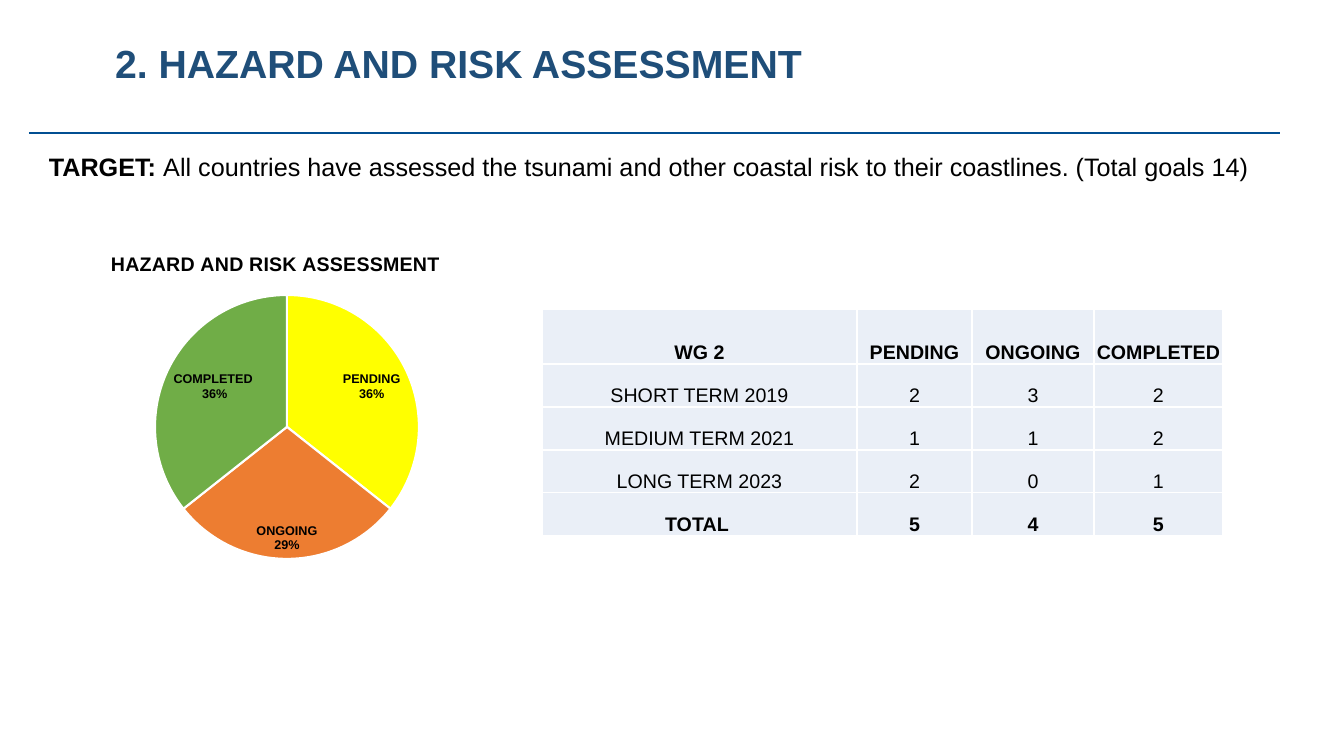
"""Builds the hazard and risk assessment slide with its pie chart and goals table."""
from dataclasses import dataclass

from lxml.etree import SubElement
from pptx import Presentation
from pptx.chart.data import CategoryChartData
from pptx.dml.color import RGBColor
from pptx.enum.chart import XL_CHART_TYPE as ChartType, XL_LABEL_POSITION as LabelPos
from pptx.enum.shapes import MSO_CONNECTOR as Connector
from pptx.enum.text import MSO_ANCHOR as Anchor, PP_ALIGN as Align
from pptx.oxml import parse_xml
from pptx.oxml.ns import nsdecls, qn
from pptx.util import Emu, Pt

EMU_PER_PX = 914400 / 100.8


@dataclass(frozen=True)
class Theme:
    font: str = "Arial"
    text: str = "000000"
    title: str = "1F4E79"
    rule: str = "014F92"
    cell: str = "EAEFF7"
    white: str = "FFFFFF"
    title_pt: int = 28
    body_pt: int = 18
    table_pt: int = 14
    label_pt: int = 9


@dataclass(frozen=True)
class Box:
    x: int
    y: int
    w: int
    h: int

    def emu(self) -> tuple:
        return px(self.x), px(self.y), px(self.w), px(self.h)


@dataclass(frozen=True)
class Slice:
    name: str
    percent: int
    color: str


@dataclass(frozen=True)
class Row:
    cells: tuple
    height: int = 43
    bold: bool = False


THEME = Theme()
HEADING = "HAZARD AND RISK ASSESSMENT"
CHART = Box(-41, 235, 633, 375)
PIE = Box(155, 295, 264, 264)
TABLE = Box(542, 309, 681, 227)
COLUMNS = (315, 115, 122, 129)
SLICES = (
    Slice("PENDING", 36, "FFFF00"),
    Slice("ONGOING", 29, "ED7D31"),
    Slice("COMPLETED ", 36, "70AD47"),
)
ROWS = (
    Row(("WG 2", *(piece.name for piece in SLICES)), 55, True),
    Row(("SHORT TERM 2019", "2", "3", "2")),
    Row(("MEDIUM TERM 2021", "1", "1", "2")),
    Row(("LONG TERM 2023", "2", "0", "1")),
    Row(("TOTAL ", "5", "4", "5"), bold=True),
)


def px(n: int) -> Emu:
    return Emu(round(n * EMU_PER_PX))


def rgb(color: str) -> RGBColor:
    return RGBColor.from_string(color)


def style(font, *, size: int, color: str = THEME.text, bold: bool = False) -> None:
    font.name, font.size, font.bold = THEME.font, Pt(size), bold
    font.color.rgb = rgb(color)


def add_text(p, text: str, **fmt) -> None:
    r = p.add_run()
    r.text = text
    style(r.font, **fmt)


def add_title(s) -> None:
    sp = s.shapes.title
    sp.left, sp.top, sp.width, sp.height = Box(105, 40, 795, 73).emu()
    tf = sp.text_frame
    tf.vertical_anchor = Anchor.TOP
    p = tf.paragraphs[0]
    p.alignment, p.line_spacing = Align.LEFT, 0.9
    add_text(p, f"2. {HEADING}", size=THEME.title_pt, color=THEME.title, bold=True)


def add_target(s) -> None:
    tf = s.shapes.add_textbox(*Box(39, 146, 1283, 40).emu()).text_frame
    tf.word_wrap = True
    p = tf.paragraphs[0]
    p.space_after = Pt(6)
    add_text(p, "TARGET: ", size=THEME.body_pt, bold=True)
    add_text(p, "All countries have assessed the tsunami and other coastal risk "
             "to their coastlines. (Total goals 14)", size=THEME.body_pt)


def place_plot(chart) -> None:
    plot_area = chart._chartSpace.chart.plotArea
    for old in plot_area.findall(qn("c:layout")):
        plot_area.remove(old)
    layout = parse_xml(f'<c:layout {nsdecls("c")}><c:manualLayout/></c:layout>')
    settings = {
        "layoutTarget": "inner", "xMode": "edge", "yMode": "edge",
        "x": (PIE.x - CHART.x) / CHART.w, "y": (PIE.y - CHART.y) / CHART.h,
        "w": PIE.w / CHART.w, "h": PIE.h / CHART.h,
    }
    for name, value in settings.items():
        SubElement(layout[0], qn(f"c:{name}")).set("val", str(value))
    plot_area.insert(0, layout)


def add_pie(s) -> None:
    data = CategoryChartData()
    data.categories = [piece.name for piece in SLICES]
    data.add_series(HEADING, [piece.percent for piece in SLICES])
    chart = s.shapes.add_chart(ChartType.PIE, *CHART.emu(), data).chart
    style(chart.font, size=10, bold=True)
    chart.has_legend = False
    chart.has_title = True
    add_text(chart.chart_title.text_frame.paragraphs[0], HEADING,
             size=THEME.table_pt, bold=True)
    plot = chart.plots[0]
    plot.vary_by_categories = True
    for i, piece in enumerate(SLICES):
        fmt = plot.series[0].points[i].format
        fmt.fill.solid()
        fmt.fill.fore_color.rgb = rgb(piece.color)
        fmt.line.color.rgb = rgb(THEME.white)
        fmt.line.width = Pt(1.5)
    plot.has_data_labels = True
    labels = plot.data_labels
    labels.show_category_name = labels.show_percentage = True
    labels.show_value = False
    labels.number_format, labels.number_format_is_linked = "0%", False
    labels.position = LabelPos.INSIDE_END
    style(labels.font, size=THEME.label_pt, bold=True)
    place_plot(chart)


def add_borders(cell) -> None:
    tc_pr = cell._tc.get_or_add_tcPr()
    for i, side in enumerate("LRTB"):
        tc_pr.insert(i, parse_xml(
            f'<a:ln{side} {nsdecls("a")} w="{Pt(1)}"><a:solidFill>'
            f'<a:srgbClr val="{THEME.white}"/></a:solidFill></a:ln{side}>'))


def fill_cell(cell, text: str, bold: bool) -> None:
    cell.fill.solid()
    cell.fill.fore_color.rgb = rgb(THEME.cell)
    cell.vertical_anchor = Anchor.BOTTOM
    cell.margin_left = cell.margin_right = cell.margin_top = px(1)
    cell.margin_bottom = 0
    p = cell.text_frame.paragraphs[0]
    p.alignment = Align.CENTER
    add_text(p, text, size=THEME.table_pt, bold=bold)
    add_borders(cell)


def add_goals(s) -> None:
    table = s.shapes.add_table(len(ROWS), len(COLUMNS), *TABLE.emu()).table
    for column, width in zip(table.columns, COLUMNS):
        column.width = px(width)
    for i, row in enumerate(ROWS):
        table.rows[i].height = px(row.height)
        for j, text in enumerate(row.cells):
            fill_cell(table.cell(i, j), text, row.bold)


def add_rule(s) -> None:
    line = s.shapes.add_connector(Connector.STRAIGHT, px(29), px(133), px(1280), px(133))
    line.line.color.rgb = rgb(THEME.rule)
    line.line.width = Pt(1.75)
    SubElement(line._element.spPr, qn("a:effectLst"))


def main() -> None:
    prs = Presentation()
    prs.slide_width, prs.slide_height = px(1344), px(756)
    s = prs.slides.add_slide(prs.slide_layouts[5])
    for add in (add_title, add_target, add_pie, add_goals, add_rule):
        add(s)
    prs.save("out.pptx")


if __name__ == "__main__":
    main()
